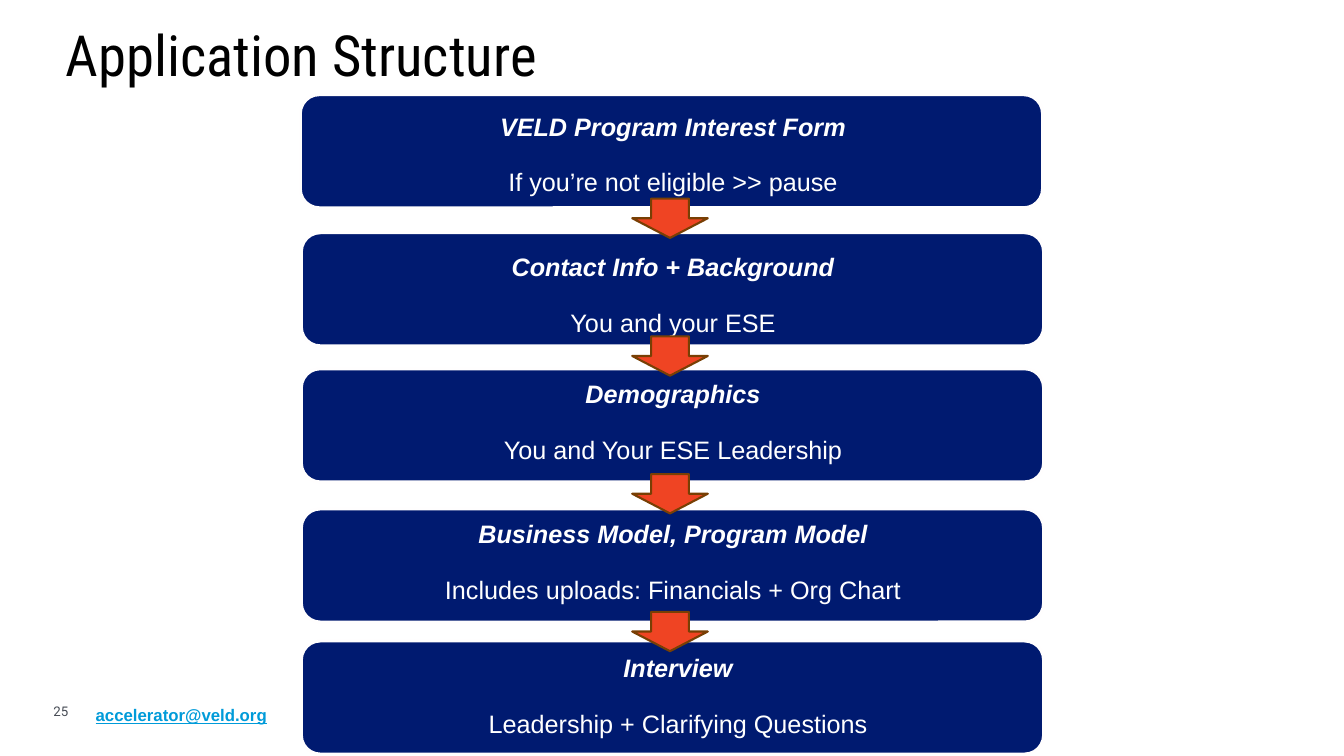
"""Build the Application Structure slide: five stages joined by arrows."""
import pptx
import pptx.util
import pptx.dml.color
import pptx.enum.shapes
import pptx.enum.text

Inches, Pt = pptx.util.Inches, pptx.util.Pt
SHAPE = pptx.enum.shapes.MSO_SHAPE
ALIGN = pptx.enum.text.PP_ALIGN
MIDDLE = pptx.enum.text.MSO_ANCHOR.MIDDLE

COLORS = {"navy": "001A70", "edge": "FFFEFE", "white": "FFFFFF", "black": "000000",
          "arrow": "EF4423", "brown": "783F04", "link": "009BD9", "gray": "474C55"}
TITLE = "Application Structure"
EMAIL = "accelerator@veld.org"
PAGE = "25"
# box left, box top, text left, text top, heading, detail
STAGES = [
    (2.98, 0.94, 3.7, 1.07, "VELD Program Interest Form", "If you’re not eligible >> pause"),
    (2.99, 2.31, 3.7, 2.46, "Contact Info + Background", "You and your ESE"),
    (2.99, 3.66, 3.7, 3.72, "Demographics", "You and Your ESE Leadership"),
    (2.99, 5.05, 3.7, 5.11, "Business Model, Program Model",
     "Includes uploads: Financials + Org Chart"),
    (2.99, 6.36, 3.75, 6.44, "Interview", "Leadership + Clarifying Questions"),
]
BOX_W, BOX_H = 7.36, 1.12
TEXT_W, TEXT_H = 5.95, 1.06
ARROW_LEFT, ARROW_TOP, ARROW_W, ARROW_H = 6.27, 1.97, 0.75, 0.39
ARROW_STEP = 4.1 / 3


def rgb(name):
    return pptx.dml.color.RGBColor.from_string(COLORS[name])


def add_block(slide, kind, at, fill, line, width):
    sp = slide.shapes.add_shape(kind, *map(Inches, at))
    sp.shadow.inherit = False
    sp.fill.solid()
    sp.fill.fore_color.rgb = rgb(fill)
    sp.line.color.rgb = rgb(line)
    sp.line.width = Pt(width)


def set_frame(tf, inset_x, inset_y):
    tf.word_wrap = True
    tf.margin_left = tf.margin_right = Inches(inset_x)
    tf.margin_top = tf.margin_bottom = Inches(inset_y)


def add_text(slide, at, inset):
    tf = slide.shapes.add_textbox(*map(Inches, at)).text_frame
    set_frame(tf, inset, inset)
    return tf


def add_run(p, text, size, font, color, bold=False, italic=False, underline=False):
    r = p.add_run()
    r.text = text
    r.font.size, r.font.name = Pt(size), font
    r.font.color.rgb = rgb(color)
    r.font.bold, r.font.italic, r.font.underline = bold, italic, underline


def add_title(slide):
    sp = slide.shapes.title
    sp.left, sp.top, sp.width, sp.height = map(Inches, (0.55, 0.15, 11.63, 0.76))
    tf = sp.text_frame
    set_frame(tf, 0.1, 0.05)
    tf.vertical_anchor = MIDDLE
    p = tf.paragraphs[0]
    p.alignment = ALIGN.LEFT
    add_run(p, TITLE, 40.5, "Roboto Condensed", "black")


def add_stage_text(slide, left, top, heading, detail):
    tf = add_text(slide, (left, top, TEXT_W, TEXT_H), 0.07)
    first, second = tf.paragraphs[0], tf.add_paragraph()
    for p in (first, second):
        p.alignment = ALIGN.CENTER
        p.line_spacing = 0.9
    second.space_before = Pt(20)
    add_run(first, heading, 18, "Arial", "white", bold=True, italic=True)
    add_run(second, detail, 18, "Arial", "white")


def main():
    prs = pptx.Presentation()
    prs.slide_width, prs.slide_height = Inches(13.33), Inches(7.5)
    slide = prs.slides.add_slide(prs.slide_layouts[5])
    add_title(slide)

    for left, top, *_ in STAGES:
        add_block(slide, SHAPE.ROUNDED_RECTANGLE, (left, top, BOX_W, BOX_H), "navy", "edge", 2)
    for _, _, left, top, heading, detail in STAGES:
        add_stage_text(slide, left, top, heading, detail)
    for i in range(len(STAGES) - 1):
        at = (ARROW_LEFT, ARROW_TOP + i * ARROW_STEP, ARROW_W, ARROW_H)
        add_block(slide, SHAPE.DOWN_ARROW, at, "arrow", "brown", 1.5)

    tf = add_text(slide, (0.53, 6.98, 1.14, 0.16), 0)
    tf.vertical_anchor = MIDDLE
    add_run(tf.paragraphs[0], PAGE, 9.5, "Roboto", "gray")

    p = add_text(slide, (0.85, 6.86, 3.28, 0.4), 0.1).paragraphs[0]
    p.line_spacing = 1.15
    add_run(p, EMAIL, 12, "Arial", "link", bold=True, underline=True)
    prs.save("out.pptx")


if __name__ == "__main__":
    main()
